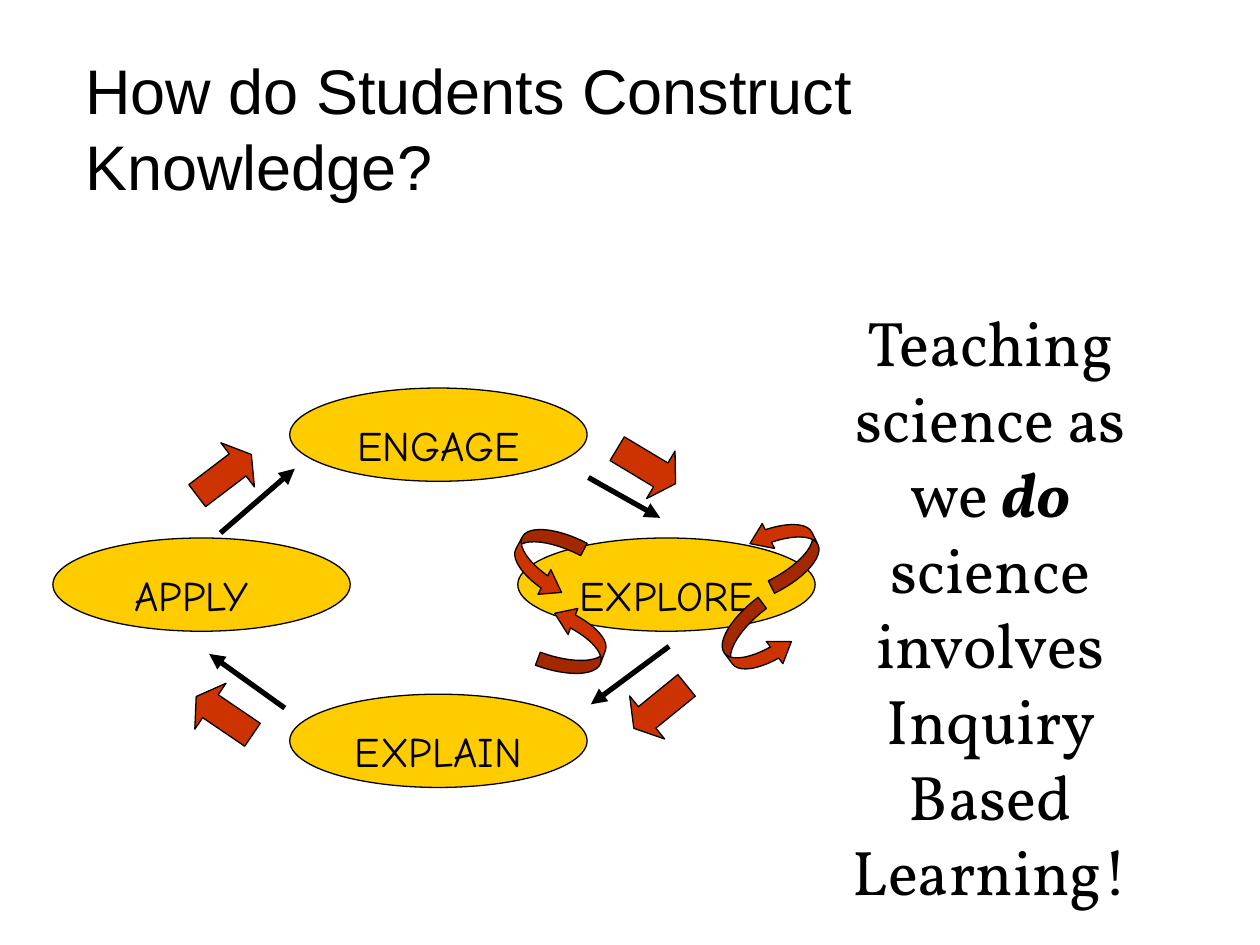
from dataclasses import dataclass

from lxml.etree import SubElement
from pptx import Presentation
from pptx.dml.color import RGBColor as Color
from pptx.enum.shapes import MSO_CONNECTOR as Connector, MSO_SHAPE as Shape
from pptx.enum.text import MSO_ANCHOR as Anchor, PP_ALIGN as Align
from pptx.oxml.ns import qn
from pptx.util import Inches, Pt


@dataclass(frozen=True)
class Theme:
    """Colours, fonts and sizes of the slide."""
    ink: Color = Color(0, 0, 0)
    stage: Color = Color(0xFF, 0xCC, 0)
    arrow: Color = Color(0xCC, 0x33, 0)
    title_font: str = "Arial"
    label_font: str = "Comic Neue"
    message_font: str = "Vollkorn"
    large: int = 36
    label: int = 24
    outline: float = 0.75
    flow: float = 3


@dataclass(frozen=True)
class Box:
    """A region measured in grid columns and rows."""
    left: float
    top: float
    width: float
    height: float

    def inner(self, left, top, width, height):
        """Return a box placed relative to this one."""
        return Box(self.left + left, self.top + top, width, height)

    def lengths(self):
        """Return the position and size as slide lengths."""
        return [grid(n) for n in (self.left, self.top, self.width, self.height)]


THEME = Theme()
COLUMNS, ROWS = 100, 75
STAGE_SIZE = (23.6, 7.4)
LABEL_SIZE = (17.3, 5)
LABEL_DROP = 2
STAGES = [
    ("ENGAGE", 18.8, 0, 0),
    ("APPLY", 0, 11.9, -0.8),
    ("EXPLAIN", 18.8, 24.3, 0),
    ("EXPLORE", 36.9, 11.9, 0),
]
FLOWS = [
    (42.5, 7.1, 48.2, 10.3),
    (48.9, 20.5, 42.7, 25.1),
    (13.3, 11.5, 19.2, 6.4),
    (18.4, 25.4, 12.4, 21.1),
]
BLOCK_ARROWS = [
    (46, 22.6, 50.9), (11.4, 4.2, 232.8), (11.4, 23.3, 124.2), (44.9, 3.5, 301),
]
CURVED_ARROWS = [
    (55.8, 10, 153.6), (36.6, 10.9, 27.6), (39.1, 17.5, 200.3), (53.3, 17.5, 323.1),
]


def grid(cells):
    """Convert grid cells to a slide length."""
    return Inches(cells / 10)


def add_span(para, text, font, size, strong=False):
    """Add one run of text."""
    span = para.add_run()
    span.text = text
    span.font.name = font
    span.font.size = Pt(size)
    span.font.color.rgb = THEME.ink
    span.font.bold = span.font.italic = strong


def add_text(shapes, box, align, anchor=Anchor.TOP):
    """Add a wrapping text box and return its paragraph."""
    frame = shapes.add_textbox(*box.lengths()).text_frame
    frame.word_wrap = True
    frame.vertical_anchor = anchor
    para = frame.paragraphs[0]
    para.alignment = align
    return para


def add_filled(shapes, kind, box, fill, turn=0, adjust=()):
    """Add an outlined preset shape."""
    shape = shapes.add_shape(kind, *box.lengths())
    shape.shadow.inherit = False
    shape.fill.solid()
    shape.fill.fore_color.rgb = fill
    shape.line.color.rgb = THEME.ink
    shape.line.width = Pt(THEME.outline)
    shape.rotation = turn
    for index, value in enumerate(adjust):
        shape.adjustments[index] = value


def add_flow(shapes, box, start_x, start_y, end_x, end_y):
    """Add a straight line with an arrowhead at its end."""
    line = shapes.add_connector(
        Connector.STRAIGHT,
        grid(box.left + start_x), grid(box.top + start_y),
        grid(box.left + end_x), grid(box.top + end_y))
    line.line.color.rgb = THEME.ink
    line.line.width = Pt(THEME.flow)
    properties = line.element.spPr
    SubElement(properties.find(qn("a:ln")), qn("a:tailEnd"), type="triangle")
    SubElement(properties, qn("a:effectLst"))


def add_title(page, box):
    """Place the two-line title."""
    para = add_text(page.shapes, box, Align.LEFT, Anchor.BOTTOM)
    add_span(para, "How do Students Construct", THEME.title_font, THEME.large)
    para.add_line_break()
    add_span(para, "Knowledge?", THEME.title_font, THEME.large)


def add_cycle(page, box):
    """Place the learning cycle with its stages and arrows."""
    shapes = page.shapes.add_group_shape().shapes
    for _, left, top, _ in STAGES:
        add_filled(shapes, Shape.OVAL, box.inner(left, top, *STAGE_SIZE), THEME.stage)
    inset = (STAGE_SIZE[0] - LABEL_SIZE[0]) / 2
    for name, left, top, shift in STAGES:
        label = box.inner(left + inset + shift, top + LABEL_DROP, *LABEL_SIZE)
        para = add_text(shapes, label, Align.CENTER)
        add_span(para, name, THEME.label_font, THEME.label)
    for flow in FLOWS:
        add_flow(shapes, box, *flow)
    for left, top, turn in BLOCK_ARROWS:
        add_filled(shapes, Shape.DOWN_ARROW, box.inner(left, top, 4.4, 5.4),
                   THEME.arrow, turn, (0.5, 0.31))
    for left, top, turn in CURVED_ARROWS:
        add_filled(shapes, Shape.CURVED_RIGHT_ARROW, box.inner(left, top, 4.8, 5.5),
                   THEME.arrow, turn, (0.23, 0.46, 0.33))


def add_message(page, box):
    """Place the closing statement beside the cycle."""
    para = add_text(page.shapes, box, Align.CENTER)
    for text, strong in [("Teaching science as we ", False), ("do", True),
                         (" science involves Inquiry Based Learning!", False)]:
        add_span(para, text, THEME.message_font, THEME.large, strong)


def main():
    """Build and save the deck."""
    deck = Presentation()
    deck.slide_width, deck.slide_height = grid(COLUMNS), grid(ROWS)
    page = deck.slides.add_slide(deck.slide_layouts[6])
    add_title(page, Box(5.8, 3.3, 84.4, 13.3))
    add_cycle(page, Box(4.2, 30.8, 60.6, 31.7))
    add_message(page, Box(65.7, 23.6, 25.8, 55.1))
    deck.save("out.pptx")


if __name__ == "__main__":
    main()
